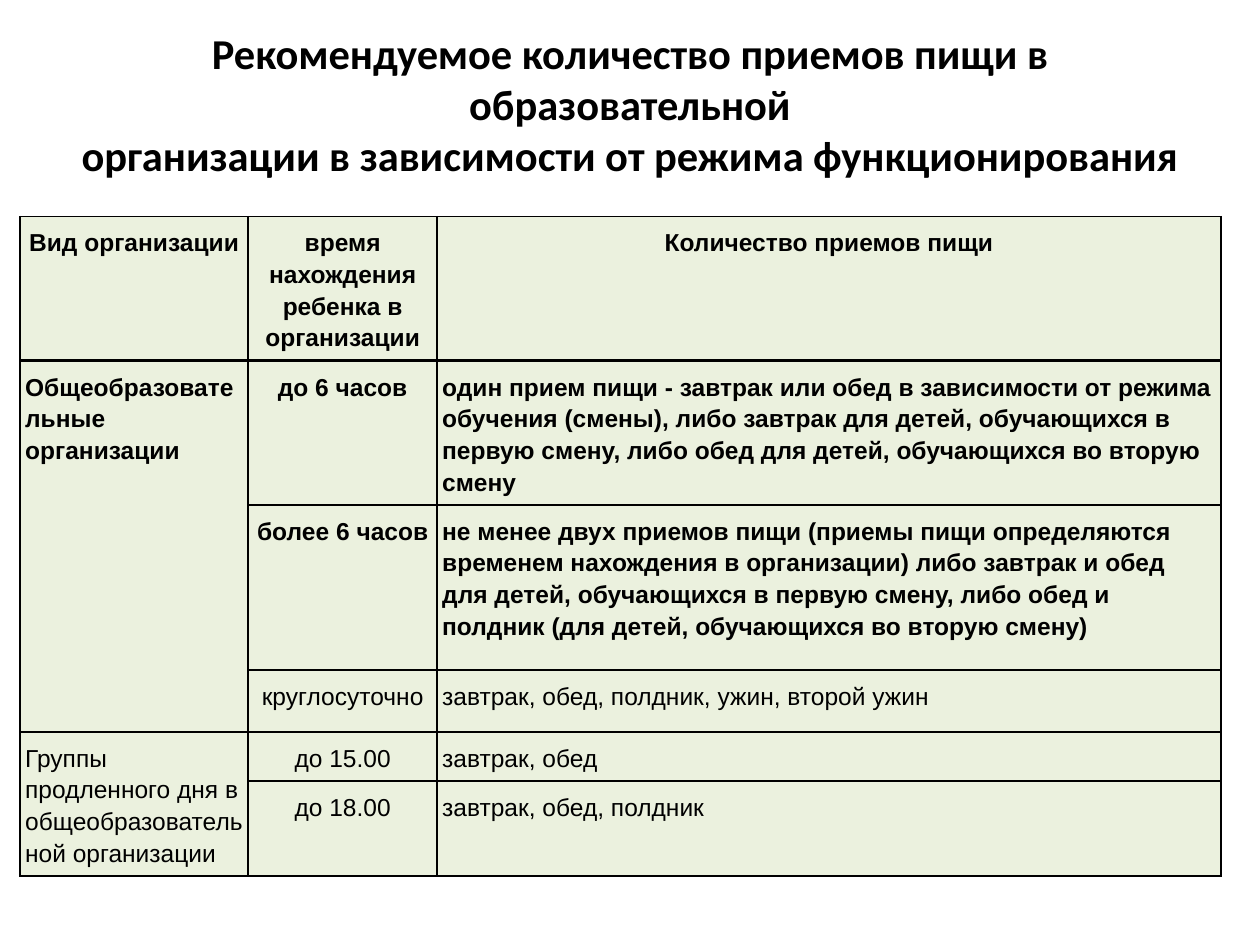
from pptx import Presentation
from pptx.dml.color import RGBColor as RGB
from pptx.enum.text import MSO_ANCHOR as Anchor, MSO_AUTO_SIZE as Fit, PP_ALIGN as Align
from pptx.oxml import parse_xml
from pptx.oxml.ns import nsdecls
from pptx.util import Inches, Pt

HUES = {"ink": "000000", "cell": "EBF1DE"}
COLS = [1.81, 1.5, 6.22]
ROWS = [1.09, 1, 1.31, 0.49, 0.38, 0.75]
TITLE = ["Рекомендуемое количество приемов пищи в образовательной",
         "организации в зависимости от режима функционирования"]
DATA = [
    ["Вид организации", "время нахождения ребенка в организации",
     "Количество приемов пищи"],
    ["Общеобразовательные организации", "до 6 часов",
     "один прием пищи - завтрак или обед в зависимости от режима обучения "
     "(смены), либо завтрак для детей, обучающихся в первую смену, либо обед "
     "для детей, обучающихся во вторую смену"],
    ["", "более 6 часов",
     "не менее двух приемов пищи (приемы пищи определяются временем нахождения "
     "в организации) либо завтрак и обед для детей, обучающихся в первую смену, "
     "либо обед и полдник (для детей, обучающихся во вторую смену)"],
    ["", "круглосуточно", "завтрак, обед, полдник, ужин, второй ужин"],
    ["Группы продленного дня в общеобразовательной организации", "до 15.00",
     "завтрак, обед"],
    ["", "до 18.00", "завтрак, обед, полдник"],
]
SPANS = [(1, 3), (4, 5)]
BOLD = 3


def add_run(par, text, face, size, bold):
    """Add one styled run to a paragraph."""
    run = par.add_run()
    run.text = text
    font = run.font
    font.name, font.size, font.bold = face, Pt(size), bold
    font.color.rgb = RGB.from_string(HUES["ink"])


def add_title(slide, box):
    """Place the heading in the title placeholder."""
    shape = slide.shapes.title
    shape.left, shape.top, shape.width, shape.height = map(Inches, box)
    frame = shape.text_frame
    frame.word_wrap, frame.auto_size = True, Fit.NONE
    frame.vertical_anchor = Anchor.MIDDLE
    frame.margin_top, frame.margin_bottom = 0, Inches(0.21)
    par = frame.paragraphs[0]
    par.alignment = Align.CENTER
    for i, line in enumerate(TITLE):
        if i:
            par.add_line_break()
        add_run(par, line, "Calibri", 24.3, True)


def add_edges(cell, row):
    """Rule all four sides, heavier below the header row."""
    wide = {"T": 2 if row == 1 else 1, "B": 2 if row == 0 else 1}
    props = cell._tc.get_or_add_tcPr()
    for i, side in enumerate("LRTB"):
        props.insert(i, parse_xml(
            f'<a:ln{side} {nsdecls("a")} w="{Pt(wide.get(side, 1))}"><a:solidFill>'
            f'<a:srgbClr val="{HUES["ink"]}"/></a:solidFill></a:ln{side}>'))


def fill_cell(cell, text, row, col):
    """Colour, rule and write one cell."""
    cell.fill.solid()
    cell.fill.fore_color.rgb = RGB.from_string(HUES["cell"])
    add_edges(cell, row)
    cell.margin_left = cell.margin_right = Inches(0.04)
    cell.margin_top = cell.margin_bottom = Inches(0.07)
    par = cell.text_frame.paragraphs[0]
    par.line_spacing = 1.15
    par.alignment = Align.CENTER if row == 0 or col == 1 else Align.LEFT
    if text:
        add_run(par, text, "Arial", 14, row < BOLD)


def add_meals(slide, left, top):
    """Build the table of meals from its top left corner."""
    box = map(Inches, (left, top, sum(COLS), sum(ROWS)))
    table = slide.shapes.add_table(len(ROWS), len(COLS), *box).table
    table.horz_banding = False
    for col, wide in zip(table.columns, COLS):
        col.width = Inches(wide)
    for row, high in zip(table.rows, ROWS):
        row.height = Inches(high)
    for r, line in enumerate(DATA):
        for c, text in enumerate(line):
            fill_cell(table.cell(r, c), text, r, c)
    for first, last in SPANS:
        table.cell(first, 0).merge(table.cell(last, 0))


def main():
    """Build and save the slide."""
    deck = Presentation()
    deck.slide_width, deck.slide_height = Inches(10), Inches(7.5)
    slide = deck.slides.add_slide(deck.slide_layouts[5])
    add_title(slide, (0.5, 0.3, 9, 1.25))
    add_meals(slide, 0.16, 1.72)
    deck.save("out.pptx")


if __name__ == "__main__":
    main()
